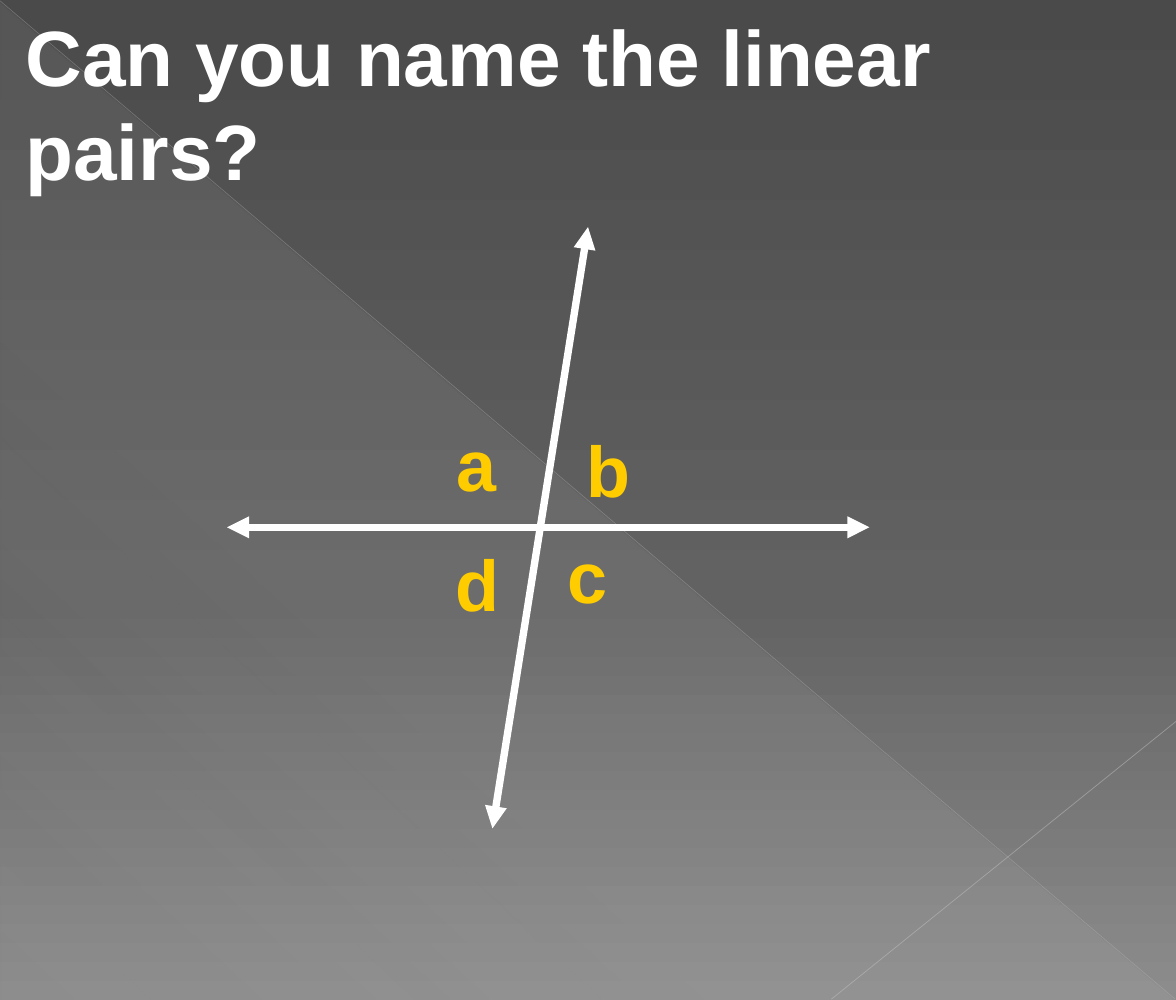
from dataclasses import dataclass

from lxml import etree
from pptx import Presentation
from pptx.dml.color import RGBColor
from pptx.enum import shapes, text
from pptx.oxml.ns import qn
from pptx.util import Pt


@dataclass(frozen=True)
class Theme:
    font: str = "Arial"
    white: str = "FFFFFF"
    gold: str = "FFCC00"
    title: int = 48
    label: int = 44
    stroke: float = 4.5
    # Gradient stops: position, colour, opacity in percent
    back: tuple = ((0, "4A4A4A", 100), (60, "626262", 100), (100, "8C8C8C", 100))
    sheen: tuple = ((0, "D2D2D2", 10), (70, "D2D2D2", 8), (100, "D2D2D2", 1))


LOOK = Theme()


def set_alpha(color, alpha):
    etree.SubElement(color, qn("a:alpha"), val=str(alpha * 1000))


def fade(fill, owner, stops, angle):
    """Fill with a gradient whose angle runs clockwise."""
    fill.gradient()
    fill.gradient_angle = 360 - angle
    items = owner.find(".//" + qn("a:gsLst"))
    for old in list(items):
        items.remove(old)
    for place, shade, alpha in stops:
        stop = etree.SubElement(items, qn("a:gs"), pos=str(place * 1000))
        color = etree.SubElement(stop, qn("a:srgbClr"), val=shade)
        if alpha < 100:
            set_alpha(color, alpha)


def add_line(slide, start, end, shade, width, alpha=100, arrows=False):
    line = slide.shapes.add_connector(
        shapes.MSO_CONNECTOR.STRAIGHT, *map(Pt, start + end))
    line.line.width = Pt(width)
    line.line.color.rgb = RGBColor.from_string(shade)
    props = line.element.spPr
    etree.SubElement(props, qn("a:effectLst"))
    if alpha < 100:
        set_alpha(props.find(".//" + qn("a:srgbClr")), alpha)
    if arrows:
        for tip in ("a:headEnd", "a:tailEnd"):
            etree.SubElement(props.find(qn("a:ln")), qn(tip), type="triangle")


def add_text(slide, words, spot, size, shade, align, wrap):
    box = slide.shapes.add_textbox(*map(Pt, spot))
    frame = box.text_frame
    frame.text = words
    frame.word_wrap = wrap
    frame.auto_size = text.MSO_AUTO_SIZE.SHAPE_TO_FIT_TEXT
    para = frame.paragraphs[0]
    para.alignment = align
    font = para.runs[0].font
    font.name, font.size, font.bold = LOOK.font, Pt(size), True
    font.color.rgb = RGBColor.from_string(shade)


def add_back(slide):
    fade(slide.background.fill, slide.element, LOOK.back, 90)
    sheen = slide.shapes.add_shape(
        shapes.MSO_SHAPE.RIGHT_TRIANGLE, Pt(0.5), Pt(1.5), Pt(719), Pt(610))
    sheen.shadow.inherit = False
    sheen.line.fill.background()
    fade(sheen.fill, sheen.element, LOOK.sheen, 133)
    add_line(slide, (0, 0.5), (719.5, 611.5), "BFBFBF", 0.39, 35)
    add_line(slide, (720, 441.5), (509, 611.5), "C6C6C6", 0.47, 45)


def main():
    deck = Presentation()
    deck.slide_width, deck.slide_height = Pt(720), Pt(612)
    slide = deck.slides.add_slide(deck.slide_layouts[6])

    # Backdrop and question
    add_back(slide)
    add_text(slide, "Can you name the linear pairs?", (8.5, 1.5, 587, 122.5),
             LOOK.title, LOOK.white, text.PP_ALIGN.LEFT, True)

    # Crossing lines
    for start, end in (((139, 322.7), (532.3, 322.7)),
                       ((360, 139), (301.5, 507))):
        add_line(slide, start, end, LOOK.white, LOOK.stroke, arrows=True)

    # Angle names
    for name, left, top, wide in (("a", 272, 253, 39), ("b", 352, 257, 41),
                                  ("c", 340.5, 322, 39), ("d", 272, 327, 41)):
        add_text(slide, name, (left, top, wide, 60), LOOK.label, LOOK.gold,
                 text.PP_ALIGN.CENTER, False)

    deck.save("out.pptx")


if __name__ == "__main__":
    main()
